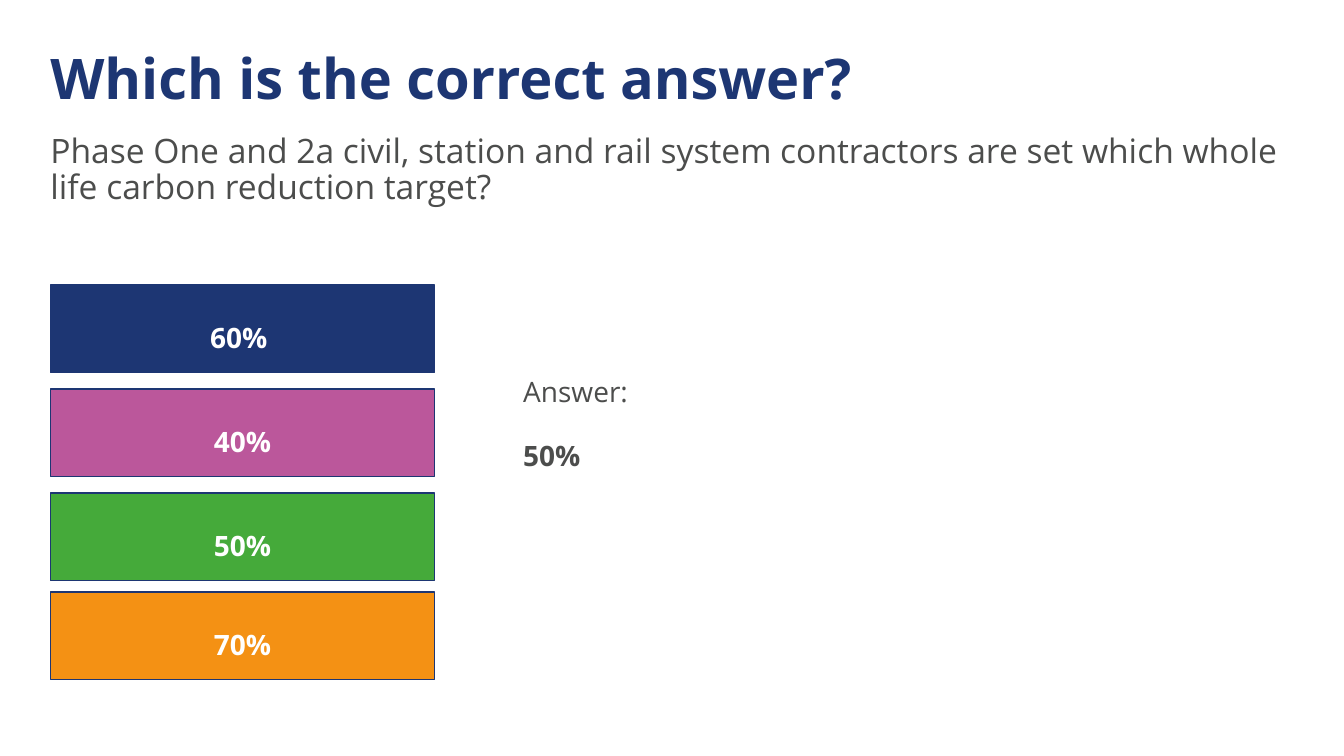
from pptx import Presentation, util as u
from pptx.dml.color import RGBColor
from pptx.enum import shapes, text

NAVY, GREY, WHITE = "1D3673", "4C4D4C", "FFFFFF"


def tint(code):
    return RGBColor.from_string(code)


class Deck:
    font = "Open Sans"

    def __init__(self, wide, high):
        self.file = Presentation()
        self.file.slide_width, self.file.slide_height = u.Pt(wide), u.Pt(high)
        self.slide = self.file.slides.add_slide(self.file.slide_layouts[5])

    def style(self, para, size, color, bold=False, lines=0.9):
        para.line_spacing = lines
        font = para.font
        font.name, font.size, font.bold = self.font, u.Pt(size), bold
        font.color.rgb = tint(color)

    def frame(self, shape):
        frame = shape.text_frame
        frame.word_wrap = True
        frame.auto_size = text.MSO_AUTO_SIZE.NONE
        frame.vertical_anchor = text.MSO_ANCHOR.TOP
        frame.margin_left = frame.margin_right = 0
        frame.margin_top = frame.margin_bottom = 0
        return frame

    def title(self, words, box, size):
        shape = self.slide.shapes.title
        shape.left, shape.top, shape.width, shape.height = map(u.Pt, box)
        frame = self.frame(shape)
        frame.text = words
        para = frame.paragraphs[0]
        para.alignment = text.PP_ALIGN.LEFT
        self.style(para, size, NAVY, True)

    def text(self, lines, box, size, gap=0):
        frame = self.frame(self.slide.shapes.add_textbox(*map(u.Pt, box)))
        for i, (words, bold) in enumerate(lines):
            para = frame.add_paragraph() if i else frame.paragraphs[0]
            para.text = words
            if i:
                para.space_before = u.Pt(gap)
            self.style(para, size, GREY, bold)

    def bar(self, words, box, fill):
        shape = self.slide.shapes.add_shape(
            shapes.MSO_SHAPE.RECTANGLE, *map(u.Pt, box))
        shape.shadow.inherit = False
        shape.fill.solid()
        shape.fill.fore_color.rgb = tint(fill)
        shape.line.color.rgb = tint(NAVY)
        shape.line.width = u.Pt(1)
        frame = shape.text_frame
        frame.vertical_anchor = text.MSO_ANCHOR.MIDDLE
        frame.text = words
        para = frame.paragraphs[0]
        para.alignment = text.PP_ALIGN.CENTER
        self.style(para, 20, WHITE, True, 1.5)


def main():
    deck = Deck(960, 540)
    deck.title("Which is the correct answer?", (36, 36.7, 888, 76.3), 40)
    deck.text([("Phase One and 2a civil, station and rail system contractors "
                "are set which whole life carbon reduction target?", False)],
              (36, 95.8, 888, 100), 24)
    bars = [("60% ", 203.6, NAVY), ("40%", 278, "BB579B"),
            ("50%", 352.3, "45AA3A"), ("70%", 422.8, "F49114")]
    for words, top, fill in bars:
        deck.bar(words, (36, top, 274.3, 62.6), fill)
    deck.text([("Answer:", False), ("50%", True)],
              (373.7, 270, 550, 199.4), 20, 24.5)
    deck.file.save("out.pptx")


if __name__ == "__main__":
    main()
